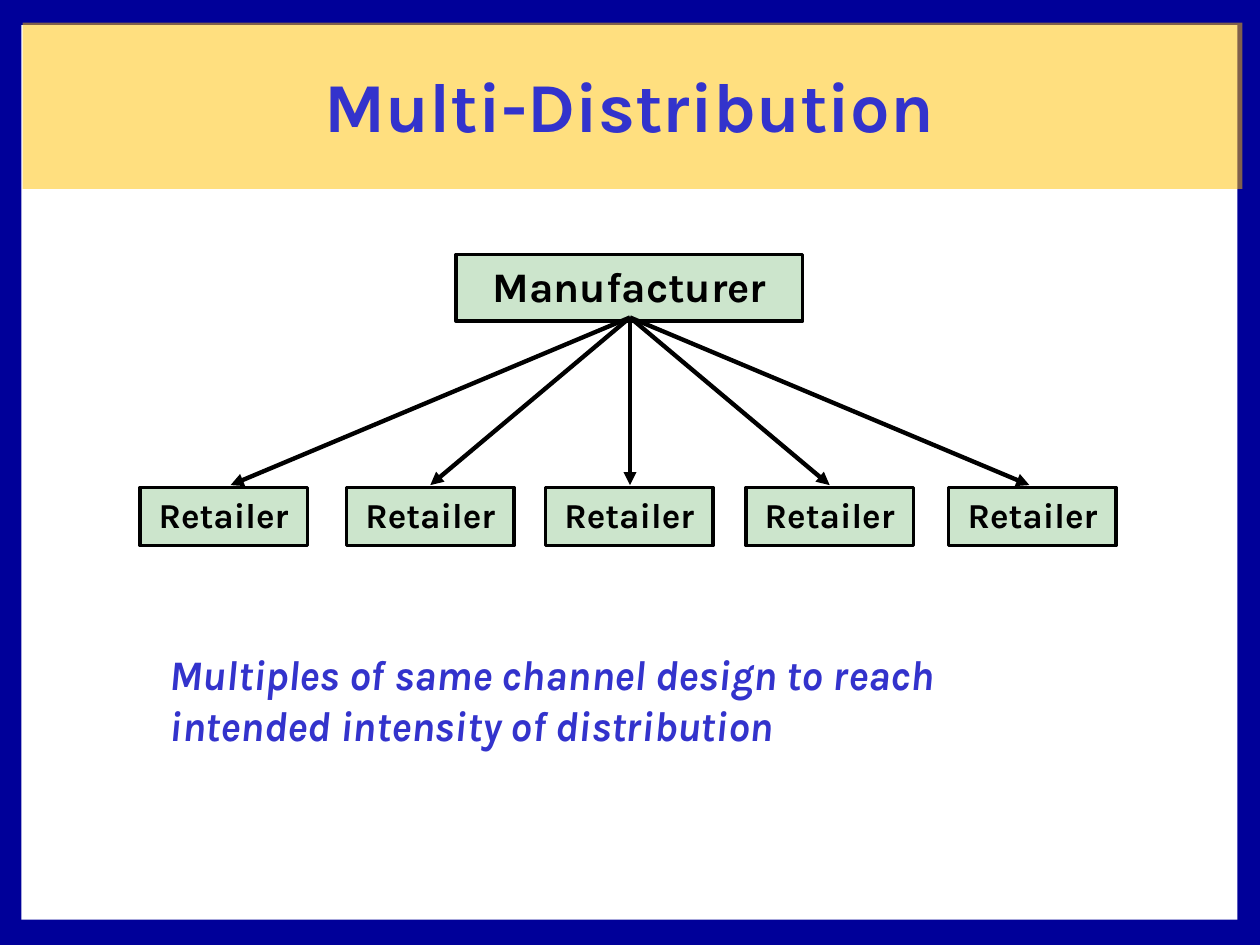
from dataclasses import dataclass

from lxml import etree
from pptx import Presentation
from pptx.dml.color import RGBColor
from pptx.enum.shapes import MSO_CONNECTOR, MSO_SHAPE
from pptx.enum.text import MSO_ANCHOR, PP_ALIGN
from pptx.oxml.ns import qn
from pptx.util import Inches, Pt

RECT = MSO_SHAPE.RECTANGLE
STRAIGHT = MSO_CONNECTOR.STRAIGHT
TOP, MIDDLE = MSO_ANCHOR.TOP, MSO_ANCHOR.MIDDLE
LEFT, CENTER = PP_ALIGN.LEFT, PP_ALIGN.CENTER

FONT = "Karla"
COLORS = {
    "frame": "000099",
    "paper": "FFFFFF",
    "banner": "FFC000",
    "accent": "3333CC",
    "node": "008000",
    "ink": "000000",
}


@dataclass
class Box:
    left: float
    top: float
    width: float
    height: float

    def emu(self):
        return [Inches(v) for v in (self.left, self.top, self.width, self.height)]


@dataclass
class Node:
    label: str
    box: Box
    size: int


def rgb(name: str) -> RGBColor:
    return RGBColor.from_string(COLORS[name])


def add_rect(slide, box: Box, color: str, opacity: int = 100, line: float = 0):
    sp = slide.shapes.add_shape(RECT, *box.emu())
    sp.shadow.inherit = False
    sp.fill.solid()
    sp.fill.fore_color.rgb = rgb(color)
    if opacity < 100:
        clr = sp._element.spPr.find(qn("a:solidFill"))[0]
        etree.SubElement(clr, qn("a:alpha"), val=str(opacity * 1000))
    if line:
        sp.line.color.rgb = rgb("ink")
        sp.line.width = Pt(line)
    else:
        sp.line.fill.background()
    return sp


def write_text(sp, text: str, *, size: int, color: str = "ink", align=CENTER,
               anchor=TOP, italic: bool = False) -> None:
    tf = sp.text_frame
    tf.word_wrap = True
    tf.vertical_anchor = anchor
    p = tf.paragraphs[0]
    p.alignment = align
    r = p.add_run()
    r.text = text
    r.font.name = FONT
    r.font.size = Pt(size)
    r.font.bold = True
    r.font.italic = italic
    r.font.color.rgb = rgb(color)


def add_node(slide, node: Node) -> None:
    sp = add_rect(slide, node.box, "node", opacity=20, line=2)
    write_text(sp, node.label, size=node.size)


def add_arrow(slide, x1: float, y1: float, x2: float, y2: float) -> None:
    cx = slide.shapes.add_connector(STRAIGHT, *map(Inches, (x1, y1, x2, y2)))
    cx.line.color.rgb = rgb("ink")
    cx.line.width = Pt(2.5)
    etree.SubElement(cx.line._get_or_add_ln(), qn("a:tailEnd"), type="triangle")
    etree.SubElement(cx._element.spPr, qn("a:effectLst"))


def main() -> None:
    prs = Presentation()
    prs.slide_width, prs.slide_height = Inches(10), Inches(7.5)
    slide = prs.slides.add_slide(prs.slide_layouts[6])

    add_rect(slide, Box(0, 0, 10, 7.5), "frame")
    add_rect(slide, Box(0.17, 0.2, 9.65, 7.1), "paper")
    add_rect(slide, Box(0.18, 0.18, 9.68, 1.32), "banner", opacity=50)

    title = slide.shapes.add_textbox(*Box(0.33, 0.33, 9.33, 1).emu())
    write_text(title, "Multi-Distribution", size=40, color="accent", anchor=MIDDLE)

    caption = slide.shapes.add_textbox(*Box(1.25, 5.1, 7.33, 0.91).emu())
    write_text(
        caption,
        "Multiples of same channel design to reach intended intensity of distribution",
        size=24, color="accent", align=LEFT, italic=True,
    )

    add_node(slide, Node("Manufacturer", Box(3.62, 2.02, 2.75, 0.53), 24))
    retailer_lefts = [1.11, 2.75, 4.33, 5.92, 7.53]
    for left in retailer_lefts:
        add_node(slide, Node("Retailer", Box(left, 3.87, 1.33, 0.46), 20))

    arrow_gap = 1.585
    for step in range(-2, 3):
        add_arrow(slide, 5, 2.52, 5 + step * arrow_gap, 3.85)

    prs.save("out.pptx")


if __name__ == "__main__":
    main()
